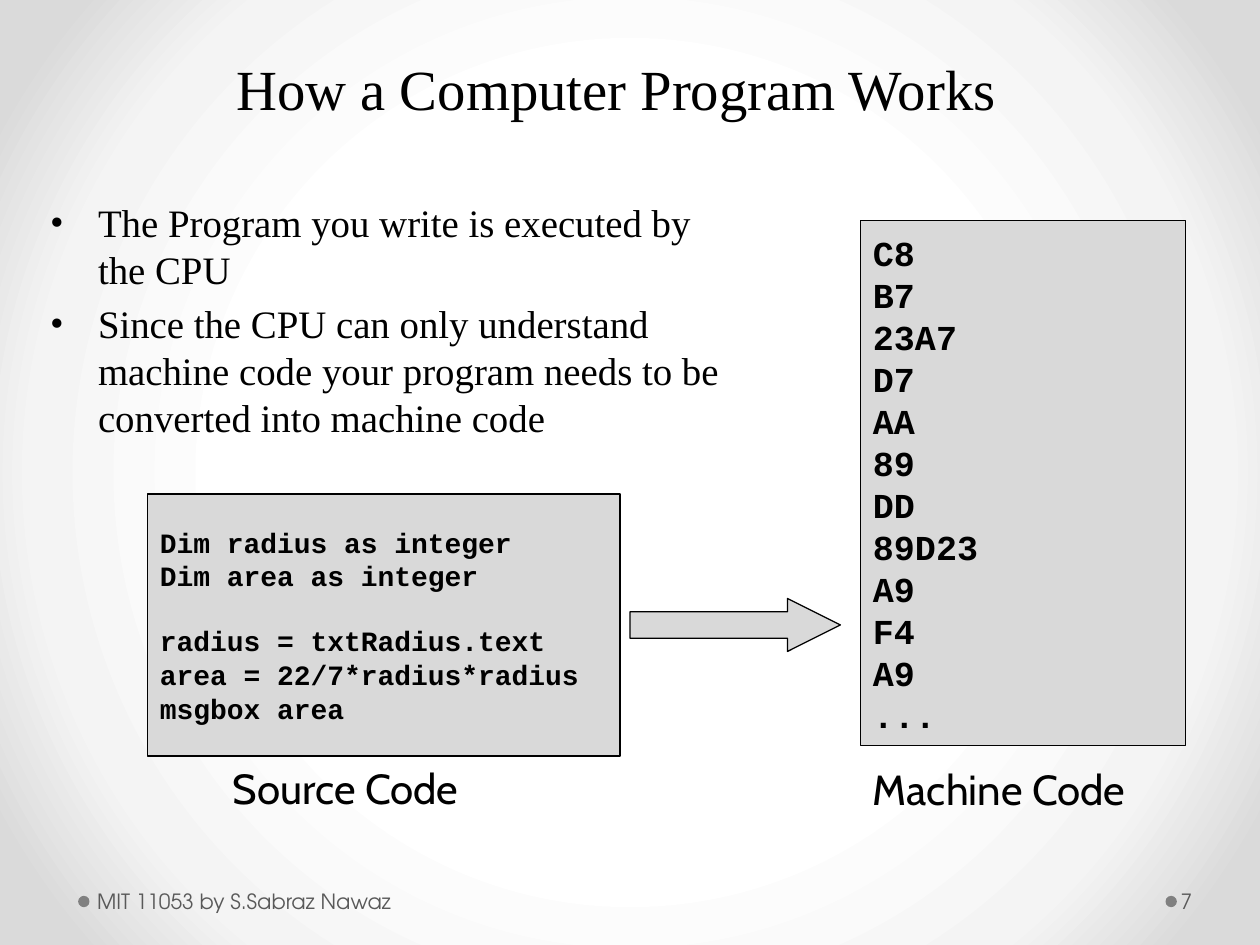
from lxml.etree import SubElement
from pptx import Presentation
from pptx.dml.color import RGBColor
from pptx.enum.shapes import MSO_SHAPE
from pptx.enum.text import MSO_ANCHOR, MSO_AUTO_SIZE, PP_ALIGN
from pptx.oxml import parse_xml
from pptx.oxml.ns import nsdecls, qn
from pptx.util import Inches, Pt

COLORS = {
    "black": "000000",
    "panel": "D9D9D9",
    "dot": "808080",
    "footer": "595959",
}
TITLE = {"name": "Times New Roman", "size": Pt(32.4), "bold": False}
BODY = {"name": "Times New Roman", "size": Pt(22.2)}
SOURCE = {"name": "Courier New", "size": Pt(16), "bold": True}
MACHINE = {"name": "Courier New", "size": Pt(20), "bold": True}
LABEL = {"name": "Cabin", "size": Pt(24)}
FOOTER = {"name": "TeX Gyre Adventor", "size": Pt(12)}


def write_lines(shape, lines, font_format, color="black", **frame_format):
    frame = shape.text_frame
    for name, value in frame_format.items():
        setattr(frame, name, value)
    frame.text = "\n".join(lines)
    for paragraph in frame.paragraphs:
        paragraph.alignment = PP_ALIGN.LEFT
        for run in paragraph.runs:
            for name, value in font_format.items():
                setattr(run.font, name, value)
            run.font.color.rgb = RGBColor.from_string(COLORS[color])
    return frame


def add_filled_shape(kind, box, fill, outlined=True):
    shape = slide.shapes.add_shape(kind, *map(Inches, box))
    shape.shadow.inherit = False
    shape.fill.solid()
    shape.fill.fore_color.rgb = RGBColor.from_string(COLORS[fill])
    if outlined:
        shape.line.color.rgb = RGBColor.from_string(COLORS["black"])
        shape.line.width = Pt(0.75)
    else:
        shape.line.fill.background()
    return shape


presentation = Presentation()
presentation.slide_width = Inches(10)
presentation.slide_height = Inches(7.5)
slide = presentation.slides.add_slide(presentation.slide_layouts[5])

# Background: radial gradient, white in the middle
slide.background.fill.gradient()
gradient = slide.background._cSld.bg.bgPr.find(qn("a:gradFill"))
stops = "".join(
    f'<a:gs pos="{position}000"><a:srgbClr val="{color}"/></a:gs>'
    for position, color in ((50, "FFFFFF"), (76, "F4F4F4"), (92, "DADADA"))
)
gradient.getparent().replace(gradient, parse_xml(
    f'<a:gradFill {nsdecls("a")} rotWithShape="1"><a:gsLst>{stops}</a:gsLst>'
    '<a:path path="circle"><a:fillToRect l="50000" t="50000" r="50000" b="50000"/>'
    '</a:path></a:gradFill>'
))

# Title
title = slide.shapes.title
title.left, title.top, title.width, title.height = map(Inches, (0.35, 0.19, 9.08, 0.83))
frame = write_lines(title, ["How a Computer Program Works"], TITLE, word_wrap=True,
                    auto_size=MSO_AUTO_SIZE.NONE, vertical_anchor=MSO_ANCHOR.BOTTOM)
frame.paragraphs[0].alignment = PP_ALIGN.CENTER
frame.paragraphs[0].line_spacing = Pt(58)

# Bulleted explanation
explanation = slide.shapes.add_textbox(*map(Inches, (0.3, 1.53, 5.7, 1.88)))
frame = write_lines(explanation, [
    "The Program you write is executed by the CPU",
    "Since the CPU can only understand machine code your program needs to be "
    "converted into machine code",
], BODY, word_wrap=True)
for paragraph in frame.paragraphs:
    properties = paragraph._p.get_or_add_pPr()
    properties.set("marL", str(Inches(0.38)))
    properties.set("indent", str(-Inches(0.38)))
    SubElement(properties, qn("a:buFont"), typeface="Times New Roman")
    SubElement(properties, qn("a:buChar"), char="•")
frame.paragraphs[1].space_before = Pt(4.5)

# Source code panel, with a one-line gap after the declarations
source_panel = add_filled_shape(MSO_SHAPE.RECTANGLE, (1.17, 3.92, 3.75, 2.08), "panel")
frame = write_lines(source_panel, [
    "Dim radius as integer",
    "Dim area as integer",
    "radius = txtRadius.text",
    "area = 22/7*radius*radius",
    "msgbox area",
], SOURCE, word_wrap=False, vertical_anchor=MSO_ANCHOR.MIDDLE)
frame.paragraphs[2].space_before = Pt(18)

# Conversion arrow
arrow = add_filled_shape(MSO_SHAPE.RIGHT_ARROW, (5, 4.75, 1.67, 0.42), "panel")
arrow.adjustments[0] = 0.5
arrow.adjustments[1] = 1

# Machine code panel
machine_panel = add_filled_shape(MSO_SHAPE.RECTANGLE, (6.83, 1.75, 2.58, 4.17), "panel")
machine_code = "C8 B7 23A7 D7 AA 89 DD 89D23 A9 F4 A9 ...".split()
write_lines(machine_panel, machine_code, MACHINE, word_wrap=False,
            vertical_anchor=MSO_ANCHOR.MIDDLE)

# Panel labels
for text, box in (
    ("Source Code", (1.75, 6, 2.67, 0.5)),
    ("Machine Code", (6.83, 6.01, 3.17, 0.5)),
):
    label = slide.shapes.add_textbox(*map(Inches, box))
    write_lines(label, [text], LABEL, word_wrap=True,
                auto_size=MSO_AUTO_SIZE.SHAPE_TO_FIT_TEXT)

# Footer and slide number, each led by a dot
for text, dot_left, left, width, margin_left, margin_right in (
    ("MIT 11053 by S.Sabraz Nawaz", 0.62, 0.72, 3.11, 0.05, 0.1),
    ("7", 9.25, 9.34, 0.61, 0.03, 0.05),
):
    add_filled_shape(MSO_SHAPE.OVAL, (dot_left, 7.11, 0.09, 0.09), "dot", outlined=False)
    footer = slide.shapes.add_textbox(*map(Inches, (left, 6.95, width, 0.4)))
    write_lines(footer, [text], FOOTER, "footer", word_wrap=True,
                vertical_anchor=MSO_ANCHOR.MIDDLE,
                margin_left=Inches(margin_left), margin_right=Inches(margin_right))

presentation.save("out.pptx")
